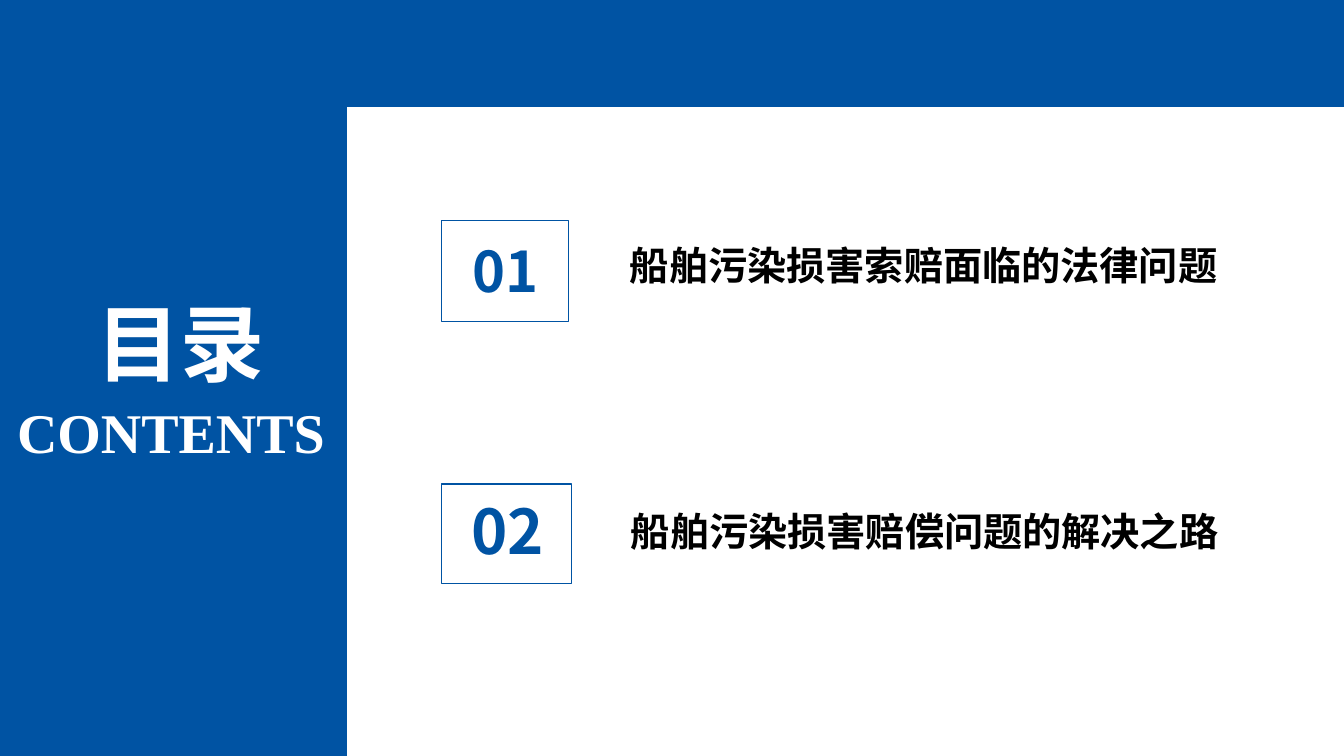
import pptx
import pptx.dml.color
import pptx.enum.shapes
import pptx.enum.text
import pptx.oxml
import pptx.oxml.ns
import pptx.util
from pptx.util import Inches

BLUE = "0053A3"
WHITE = "FFFFFF"
BLACK = "000000"
CHINESE_FONT = "Noto Sans CJK SC"
ALIGN = pptx.enum.text.PP_ALIGN


def color(value):
    return pptx.dml.color.RGBColor.from_string(value)


def add_rectangle(slide, left, top, width, height, fill=None, line=None):
    shape = slide.shapes.add_shape(
        pptx.enum.shapes.MSO_SHAPE.RECTANGLE,
        Inches(left), Inches(top), Inches(width), Inches(height))
    shape.shadow.inherit = False
    if fill:
        shape.fill.solid()
        shape.fill.fore_color.rgb = color(fill)
    else:
        shape.fill.background()
    if line:
        shape.line.color.rgb = color(line)
        shape.line.width = pptx.util.Pt(1)
    else:
        shape.line.fill.background()


def add_text(slide, text, left, top, width, height, size, text_color,
             align=ALIGN.LEFT, font_name=CHINESE_FONT):
    box = slide.shapes.add_textbox(
        Inches(left), Inches(top), Inches(width), Inches(height))
    frame = box.text_frame
    frame.word_wrap = True
    frame.auto_size = pptx.enum.text.MSO_AUTO_SIZE.SHAPE_TO_FIT_TEXT
    paragraph = frame.paragraphs[0]
    paragraph.alignment = align
    run = paragraph.add_run()
    run.text = text
    run.font.size = pptx.util.Pt(size)
    run.font.bold = True
    run.font.color.rgb = color(text_color)
    run.font.name = font_name
    east_asian = pptx.oxml.parse_xml(
        f'<a:ea {pptx.oxml.ns.nsdecls("a")} typeface="{font_name}"/>')
    run.font._element.append(east_asian)


def add_chapter(slide, number, title, number_box, number_size, frame_box, title_box):
    add_text(slide, title, *title_box, 28, BLACK)
    add_text(slide, number, *number_box, number_size, BLUE, ALIGN.CENTER)
    add_rectangle(slide, *frame_box, line=BLUE)


def main():
    presentation = pptx.Presentation()
    presentation.slide_width = Inches(13.33)
    presentation.slide_height = Inches(7.5)
    slide = presentation.slides.add_slide(presentation.slide_layouts[6])

    add_rectangle(slide, 0, 0, 3.44, 7.5, fill=BLUE)
    add_text(slide, "目录", 0.74, 2.84, 1.98, 1.11, 60, WHITE, ALIGN.RIGHT)
    add_text(slide, "CONTENTS", 0, 3.89, 3.32, 0.77, 40, WHITE, ALIGN.RIGHT,
             "Times New Roman")
    add_chapter(slide, "01", "船舶污染损害索赔面临的法律问题",
                (4.38, 2.3, 1.26, 0.77), 40,
                (4.38, 2.19, 1.26, 1), (6.15, 2.34, 6.14, 0.57))
    add_chapter(slide, "02", "船舶污染损害赔偿问题的解决之路",
                (4.25, 4.84, 1.57, 0.84), 44,
                (4.38, 4.8, 1.29, 0.99), (6.16, 4.98, 6.31, 0.57))
    add_rectangle(slide, 0, 0, 13.33, 1.06, fill=BLUE)
    presentation.save("out.pptx")


if __name__ == "__main__":
    main()
